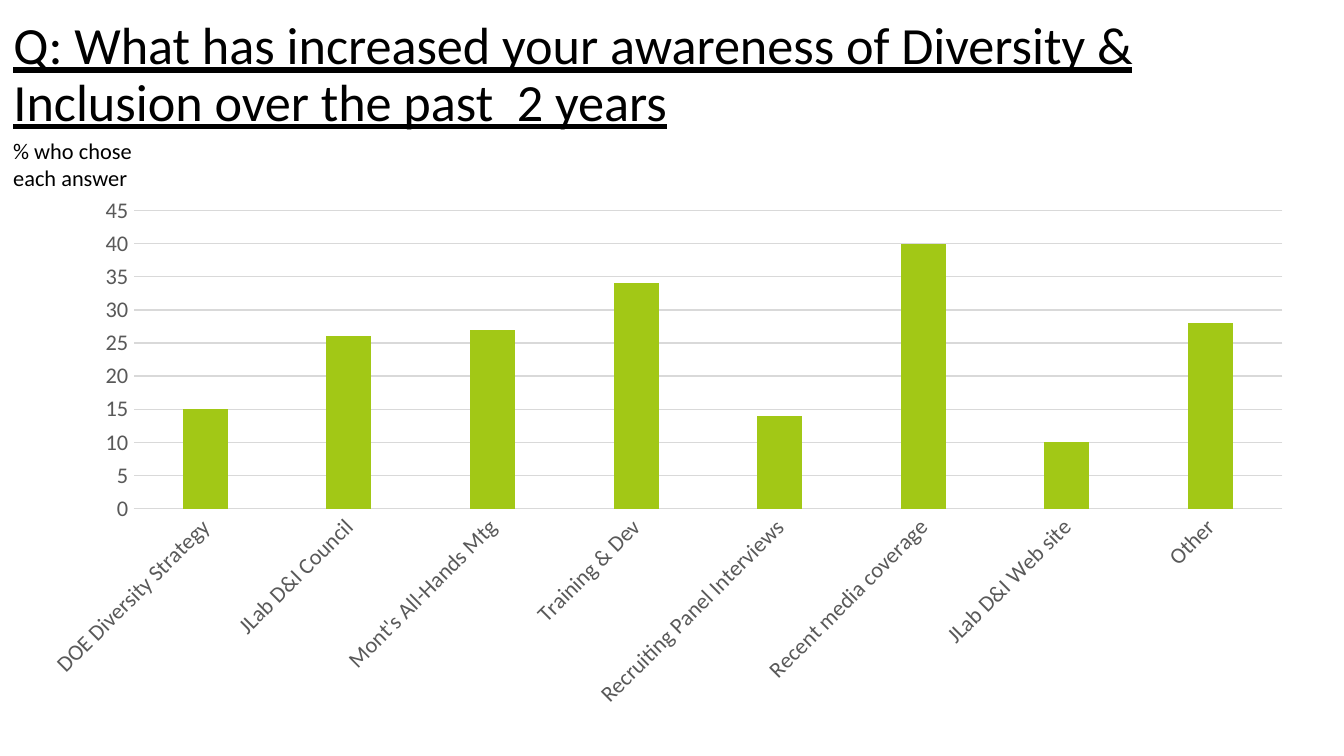
from pptx import Presentation
from pptx.chart.data import CategoryChartData
from pptx.dml.color import RGBColor
from pptx.enum.chart import XL_CHART_TYPE, XL_TICK_MARK
from pptx.enum.text import MSO_ANCHOR, MSO_AUTO_SIZE, PP_ALIGN
from pptx.util import Pt

TITLE = "Q: What has increased your awareness of Diversity & Inclusion over the past  2 years"
AXIS_NOTE = "% who chose each answer"
ANSWERS = [
    ("DOE Diversity Strategy", 15),
    ("JLab D&I Council", 26),
    ("Mont's All-Hands Mtg", 27),
    ("Training & Dev", 34),
    ("Recruiting Panel Interviews", 14),
    ("Recent media coverage", 40),
    ("JLab D&I Web site", 10),
    ("Other", 28),
]
THEME = {
    "font": "Calibri",
    "text": RGBColor.from_string("000000"),
    "label": RGBColor.from_string("595959"),
    "grid": RGBColor.from_string("D9D9D9"),
    "bar": RGBColor.from_string("A2C816"),
    "title_size": Pt(28),
    "note_size": Pt(12),
    "chart_size": Pt(10),
    "line_width": Pt(0.75),
}
SLIDE_SIZE = (Pt(720), Pt(405))
TITLE_BOX = (Pt(0), Pt(1.5), Pt(720), Pt(78.5))
NOTE_BOX = (Pt(0), Pt(70), Pt(82), Pt(36))
CHART_BOX = (Pt(13.7), Pt(100), Pt(687), Pt(285))
LABEL_ROTATION = -45


def apply(target, values):
    """Set each named attribute on the target."""
    for name, value in values.items():
        setattr(target, name, value)


def style_font(font, size, color, **extra):
    """Give a font the theme face, a size and a colour."""
    apply(font, {"name": THEME["font"], "size": size, **extra})
    font.color.rgb = color


def style_line(line):
    """Draw a line in the grid colour."""
    line.color.rgb = THEME["grid"]
    line.width = THEME["line_width"]


def write_text(shape, text, size, frame_format, paragraph_format, **font_format):
    """Fill a shape with one formatted paragraph."""
    apply(shape.text_frame, {"word_wrap": True, "auto_size": MSO_AUTO_SIZE.NONE, **frame_format})
    paragraph = shape.text_frame.paragraphs[0]
    apply(paragraph, {"alignment": PP_ALIGN.LEFT, **paragraph_format})
    run = paragraph.add_run()
    run.text = text
    style_font(run.font, size, THEME["text"], **font_format)


def add_answer_chart(slide):
    """Add the column chart of answers."""
    data = CategoryChartData()
    data.categories = [answer for answer, share in ANSWERS]
    data.add_series("Series 1", [share for answer, share in ANSWERS])
    chart = slide.shapes.add_chart(XL_CHART_TYPE.COLUMN_CLUSTERED, *CHART_BOX, data).chart
    apply(chart, {"has_legend": False, "has_title": False})
    style_font(chart.font, THEME["chart_size"], THEME["text"])

    plot = chart.plots[0]
    apply(plot, {"gap_width": 219, "overlap": -27, "vary_by_categories": False})
    fill = plot.series[0].format.fill
    fill.solid()
    fill.fore_color.rgb = THEME["bar"]

    category_axis, value_axis = chart.category_axis, chart.value_axis
    for axis in (category_axis, value_axis):
        apply(axis, {"major_tick_mark": XL_TICK_MARK.NONE, "minor_tick_mark": XL_TICK_MARK.NONE})
        style_font(axis.tick_labels.font, THEME["note_size"], THEME["label"])
    style_line(category_axis.format.line)
    category_axis._element.txPr.bodyPr.set("rot", str(LABEL_ROTATION * 60000))
    apply(value_axis, {"minimum_scale": 0, "maximum_scale": 45, "major_unit": 5})
    value_axis.format.line.fill.background()
    style_line(value_axis.major_gridlines.format.line)


def main():
    """Build and save the slide."""
    presentation = Presentation()
    presentation.slide_width, presentation.slide_height = SLIDE_SIZE
    slide = presentation.slides.add_slide(presentation.slide_layouts[5])
    add_answer_chart(slide)

    title = slide.shapes.title
    apply(title, dict(zip(("left", "top", "width", "height"), TITLE_BOX)))
    write_text(title, TITLE, THEME["title_size"], {"vertical_anchor": MSO_ANCHOR.MIDDLE},
               {"line_spacing": 0.9}, underline=True)
    write_text(slide.shapes.add_textbox(*NOTE_BOX), AXIS_NOTE, THEME["note_size"], {}, {})
    presentation.save("out.pptx")


if __name__ == "__main__":
    main()
